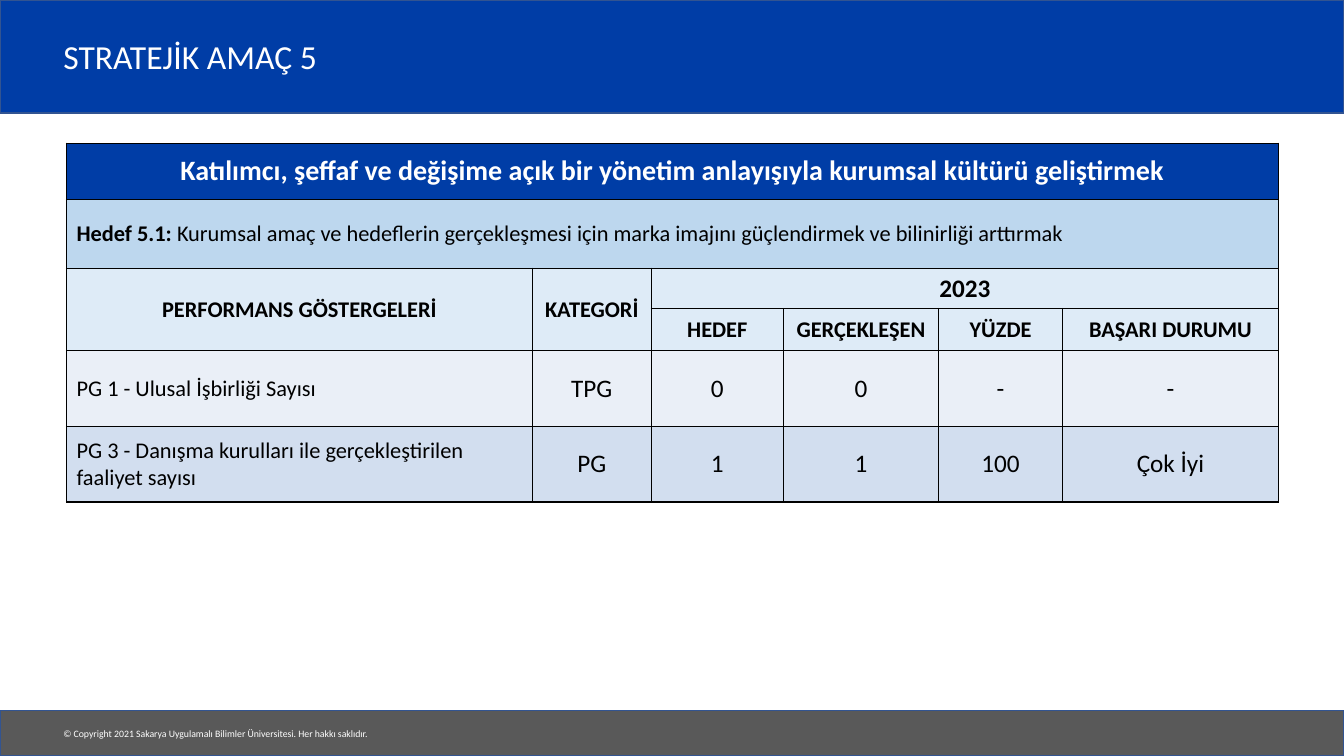
from dataclasses import dataclass

from lxml.etree import SubElement
from pptx import Presentation
from pptx.dml.color import RGBColor
from pptx.enum.shapes import MSO_SHAPE
from pptx.enum.text import MSO_ANCHOR as ANCHOR, PP_ALIGN as ALIGN
from pptx.oxml.ns import qn
from pptx.util import Inches, Pt

TITLE = "STRATEJİK AMAÇ 5"
COPYRIGHT = "© Copyright 2021 Sakarya Uygulamalı Bilimler Üniversitesi. Her hakkı saklıdır."
GOAL = "Katılımcı, şeffaf ve değişime açık bir yönetim anlayışıyla kurumsal kültürü geliştirmek"
TARGET = ("Hedef 5.1: ", "Kurumsal amaç ve hedeflerin gerçekleşmesi için marka imajını "
          "güçlendirmek ve bilinirliği arttırmak")
TALL_HEADS = ["PERFORMANS GÖSTERGELERİ", "KATEGORİ"]
YEAR = "2023"
YEAR_HEADS = ["HEDEF", "GERÇEKLEŞEN", "YÜZDE", "BAŞARI DURUMU"]
INDICATORS = [
    ("PG 1 - Ulusal İşbirliği Sayısı", "TPG", "0", "0", "-", "-"),
    ("PG 3 - Danışma kurulları ile gerçekleştirilen faaliyet sayısı",
     "PG", "1", "1", "100", "Çok İyi"),
]

WIDTH, HEIGHT = 13.33, 7.5
HEADER_H, FOOTER_H = 1.12, 0.45
TEXT_LEFT = 0.53
TABLE_LEFT, TABLE_TOP = 0.66, 1.42
COLS = [4.62, 1.18, 1.31, 1.54, 1.23, 2.14]
ROWS = [0.56, 0.68, 0.4, 0.42, 0.75, 0.75]
FIRST_INDICATOR = len(ROWS) - len(INDICATORS)


@dataclass(frozen=True)
class Theme:
    font: str = "Calibri"
    blue: str = "003DA6"
    grey: str = "595959"
    edge: str = "325491"
    white: str = "FFFFFF"
    black: str = "000000"
    target: str = "BDD7EE"
    head: str = "DEEBF7"
    bands: tuple = ("EAEFF7", "D2DEEF")
    title: int = 24
    goal: int = 20
    value: int = 18
    body: int = 16
    small: int = 7


T = Theme()


def rgb(value):
    return RGBColor.from_string(value)


def add_run(p, text, size, color, bold=False):
    r = p.add_run()
    r.text = text
    r.font.name, r.font.size, r.font.bold = T.font, Pt(size), bold
    r.font.color.rgb = rgb(color)


def add_band(s, top, height, fill):
    sp = s.shapes.add_shape(MSO_SHAPE.RECTANGLE, 0, Inches(top), Inches(WIDTH), Inches(height))
    sp.shadow.inherit = False
    sp.fill.solid()
    sp.fill.fore_color.rgb = rgb(fill)
    sp.line.color.rgb = rgb(T.edge)
    sp.line.width = Pt(1)


def add_label(s, top, width, height, text, size, wrap):
    box = s.shapes.add_textbox(Inches(TEXT_LEFT), Inches(top), Inches(width), Inches(height))
    tf = box.text_frame
    tf.word_wrap = wrap
    tf.vertical_anchor = ANCHOR.MIDDLE
    add_run(tf.paragraphs[0], text, size, T.white)


def style_cell(cell, fill):
    """Give a cell a thin black border, a fill and middle anchoring."""
    tc_pr = cell._tc.get_or_add_tcPr()
    for side in ("lnL", "lnR", "lnT", "lnB"):
        ln = SubElement(tc_pr, qn(f"a:{side}"), w=str(Pt(1)))
        SubElement(SubElement(ln, qn("a:solidFill")), qn("a:srgbClr"), val=T.black)
    cell.fill.solid()
    cell.fill.fore_color.rgb = rgb(fill)
    cell.vertical_anchor = ANCHOR.MIDDLE


def write(cell, text, size, color=T.black, bold=False, align=ALIGN.CENTER):
    p = cell.text_frame.paragraphs[0]
    p.alignment = align
    add_run(p, text, size, color, bold)


def add_indicator_table(s):
    table = s.shapes.add_table(len(ROWS), len(COLS), Inches(TABLE_LEFT), Inches(TABLE_TOP),
                               Inches(sum(COLS)), Inches(sum(ROWS))).table
    for column, width in zip(table.columns, COLS):
        column.width = Inches(width)
    row_fills = [T.blue, T.target, T.head, T.head, *T.bands]
    for i, (row, height) in enumerate(zip(table.rows, ROWS)):
        row.height = Inches(height)
        for cell in row.cells:
            style_cell(cell, row_fills[i])

    last, year_col = len(COLS) - 1, len(TALL_HEADS)
    for row, col in ((0, 0), (1, 0), (2, year_col)):
        table.cell(row, col).merge(table.cell(row, last))
    write(table.cell(0, 0), GOAL, T.goal, T.white, bold=True)
    for text, bold in zip(TARGET, (True, False)):
        write(table.cell(1, 0), text, T.body, bold=bold, align=ALIGN.LEFT)
    write(table.cell(2, year_col), YEAR, T.value, bold=True)
    for col, text in enumerate(TALL_HEADS):
        table.cell(2, col).merge(table.cell(3, col))
        write(table.cell(2, col), text, T.body, bold=True)
    for col, text in enumerate(YEAR_HEADS, year_col):
        write(table.cell(3, col), text, T.body, bold=True)
    for row, (name, *values) in enumerate(INDICATORS, FIRST_INDICATOR):
        write(table.cell(row, 0), name, T.body, align=ALIGN.LEFT)
        for col, text in enumerate(values, 1):
            write(table.cell(row, col), text, T.value)


def main():
    prs = Presentation()
    prs.slide_width, prs.slide_height = Inches(WIDTH), Inches(HEIGHT)
    s = prs.slides.add_slide(prs.slide_layouts[6])
    add_band(s, 0, HEADER_H, T.blue)
    add_band(s, HEIGHT - FOOTER_H, FOOTER_H, T.grey)
    add_label(s, 7.17, 3.29, 0.22, COPYRIGHT, T.small, wrap=False)
    add_label(s, 0.19, 11.03, 0.73, TITLE, T.title, wrap=True)
    add_indicator_table(s)
    prs.save("out.pptx")


if __name__ == "__main__":
    main()
